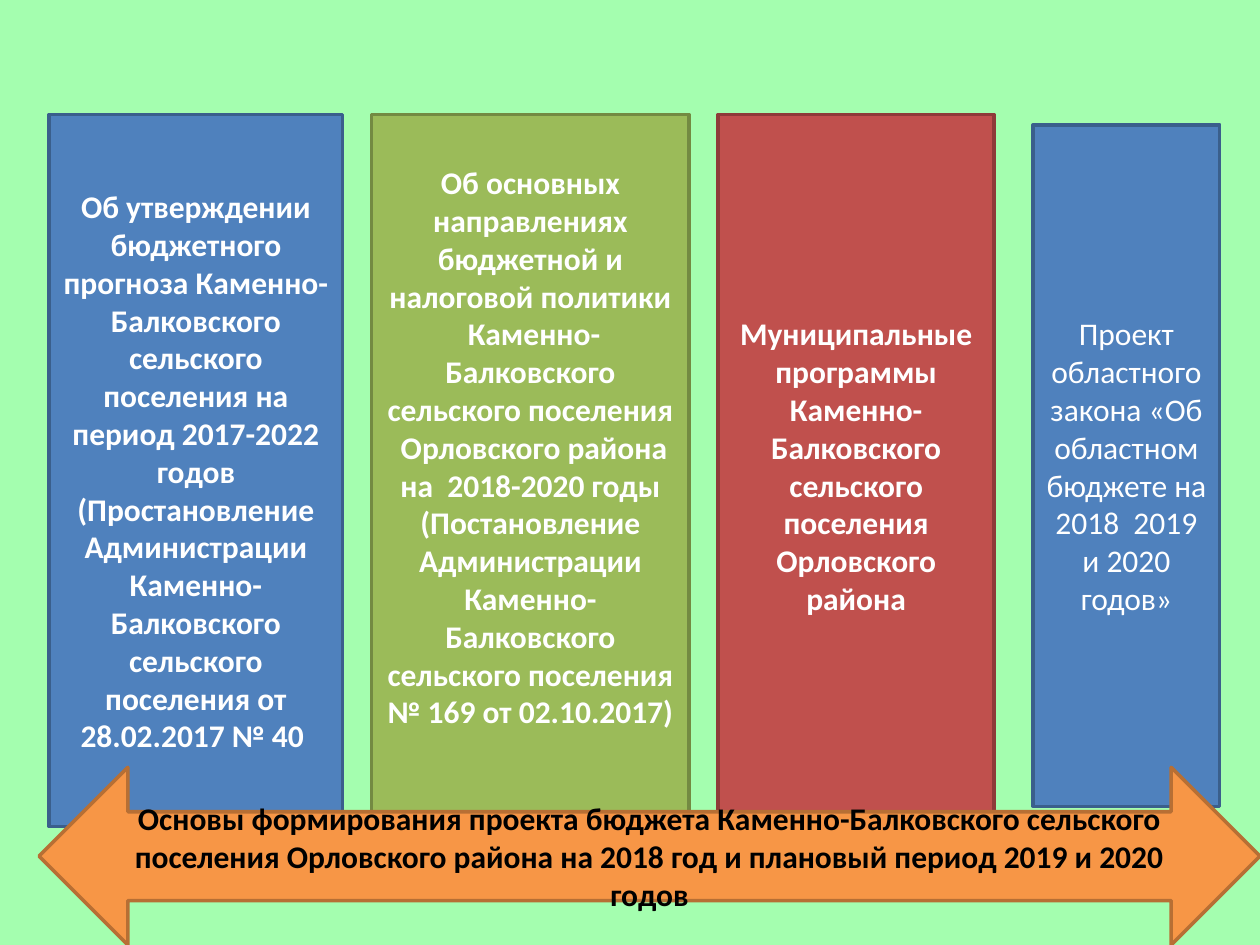
from pptx import Presentation
from pptx.dml.color import RGBColor
from pptx.enum.shapes import MSO_SHAPE
from pptx.enum.text import MSO_ANCHOR, PP_ALIGN
from pptx.util import Inches, Pt

RECT = MSO_SHAPE.RECTANGLE
ARROW = MSO_SHAPE.LEFT_RIGHT_ARROW
MIDDLE = MSO_ANCHOR.MIDDLE
CENTER = PP_ALIGN.CENTER

MINT = RGBColor(0xA4, 0xFE, 0xAF)
WHITE = RGBColor(0xFF, 0xFF, 0xFF)
BLACK = RGBColor(0, 0, 0)
# Each pair is a fill and its darker outline
BLUE = RGBColor(0x4F, 0x81, 0xBD), RGBColor(0x3A, 0x5F, 0x8C)
GREEN = RGBColor(0x9B, 0xBB, 0x59), RGBColor(0x73, 0x8A, 0x42)
RED = RGBColor(0xC0, 0x50, 0x4D), RGBColor(0x8E, 0x3B, 0x39)
ORANGE = RGBColor(0xF7, 0x96, 0x46), RGBColor(0xB7, 0x6F, 0x34)

LAW = "Проект областного закона «Об областном бюджете на 2018  2019 и 2020 годов»"
FORECAST = (
    "Об утверждении бюджетного прогноза Каменно-Балковского сельского "
    "поселения на период 2017-2022 годов (Простановление Администрации "
    "Каменно-Балковского сельского поселения от 28.02.2017 № 40 "
)
POLICY = (
    "Об основных направлениях бюджетной и налоговой политики",
    " Каменно-Балковского сельского поселения  Орловского района "
    "на  2018-2020 годы (Постановление Администрации Каменно-Балковского "
    "сельского поселения № 169 от 02.10.2017)  ",
)
PLANS = "Муниципальные программы Каменно-Балковского сельского поселения Орловского района"
BASIS = (
    "Основы формирования проекта бюджета Каменно-Балковского сельского "
    "поселения Орловского района на 2018 год и плановый период 2019 и 2020 годов"
)


class Deck:
    def __init__(self):
        self.font, self.size, self.line = "Calibri", Pt(18), Pt(2)
        self.prs = Presentation()
        self.prs.slide_width = Inches(10)
        self.prs.slide_height = Inches(7.5)
        self.slide = self.prs.slides.add_slide(self.prs.slide_layouts[6])
        back = self.slide.background.fill
        back.solid()
        back.fore_color.rgb = MINT

    def block(self, kind, box, tone, *lines, color=WHITE, bold=True):
        """Draw a filled shape with one centred paragraph per line."""
        shape = self.slide.shapes.add_shape(kind, *map(Inches, box))
        shape.shadow.inherit = False
        shape.fill.solid()
        shape.fill.fore_color.rgb, shape.line.color.rgb = tone
        shape.line.width = self.line
        frame = shape.text_frame
        frame.word_wrap = True
        frame.vertical_anchor = MIDDLE
        frame.text = "\n".join(lines)
        for para in frame.paragraphs:
            para.alignment = CENTER
            for run in para.runs:
                font = run.font
                font.name, font.size, font.bold = self.font, self.size, bold
                font.color.rgb = color

    def save(self):
        self.prs.save("out.pptx")


def main():
    deck = Deck()
    deck.block(RECT, (8.2, 0.99, 1.48, 5.41), BLUE, LAW, bold=False)
    deck.block(RECT, (0.39, 0.91, 2.33, 5.65), BLUE, FORECAST)
    deck.block(RECT, (2.95, 0.91, 2.52, 5.57), GREEN, *POLICY)
    deck.block(RECT, (5.7, 0.91, 2.19, 5.57), RED, PLANS)
    deck.block(ARROW, (0.31, 6.09, 9.69, 1.41), ORANGE, BASIS, color=BLACK)
    deck.save()


if __name__ == "__main__":
    main()
